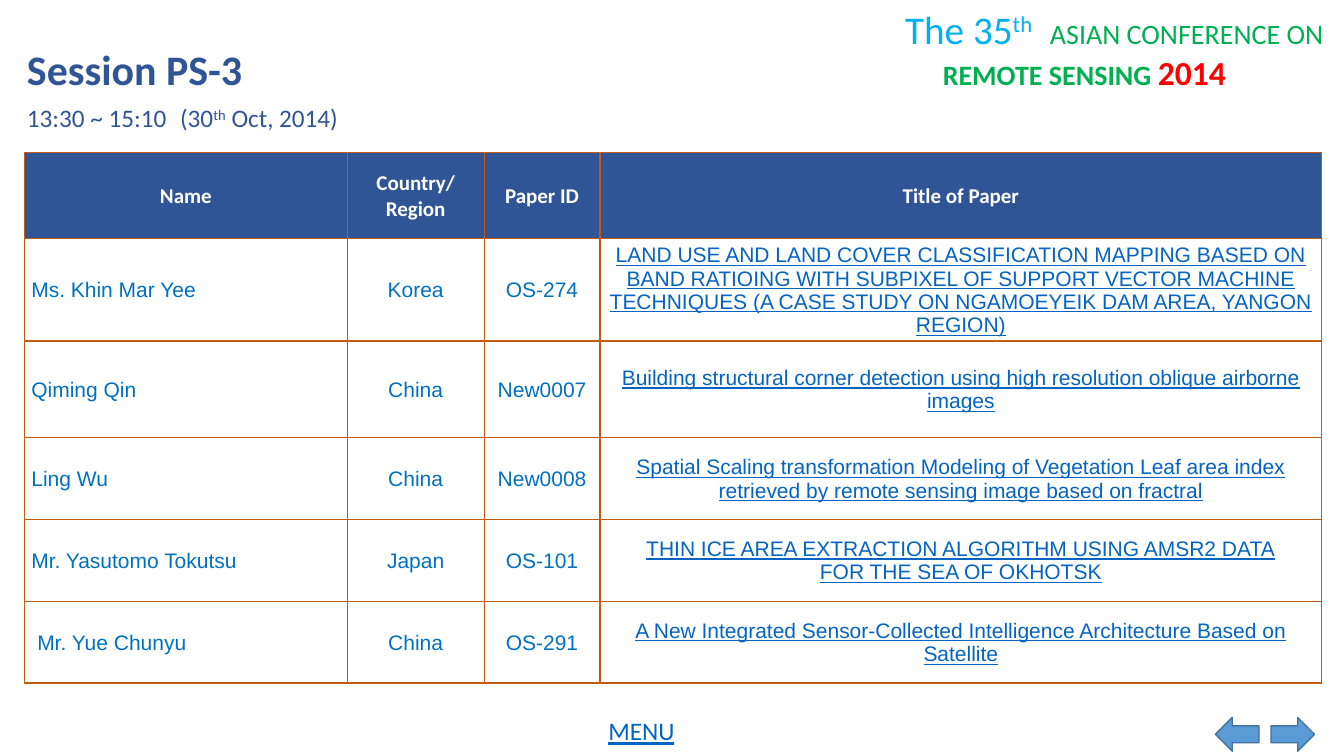
from dataclasses import dataclass, replace

from lxml import etree
from pptx import Presentation
from pptx.dml.color import RGBColor
from pptx.enum.shapes import MSO_SHAPE
from pptx.enum.text import MSO_ANCHOR, PP_ALIGN
from pptx.oxml.ns import qn
from pptx.slide import Slide
from pptx.table import _Cell
from pptx.util import Cm, Pt

LEFT, CENTER = PP_ALIGN.LEFT, PP_ALIGN.CENTER
TOP, MIDDLE = MSO_ANCHOR.TOP, MSO_ANCHOR.MIDDLE
LEFT_ARROW, RIGHT_ARROW = MSO_SHAPE.LEFT_ARROW, MSO_SHAPE.RIGHT_ARROW

WHITE = RGBColor(0xFF, 0xFF, 0xFF)
NAVY = RGBColor(0x2F, 0x55, 0x97)
BLUE = RGBColor(0x00, 0x70, 0xC0)
LINK = RGBColor(0x05, 0x63, 0xC1)
SKY = RGBColor(0x00, 0xB0, 0xF0)
GREEN = RGBColor(0x00, 0xB0, 0x50)
RED = RGBColor(0xFF, 0x00, 0x00)
ORANGE = RGBColor(0xC5, 0x5A, 0x11)
ARROW_FILL = RGBColor(0x5B, 0x9B, 0xD5)
ARROW_LINE = RGBColor(0x43, 0x73, 0x9E)


@dataclass(frozen=True)
class Style:
    size: float
    color: RGBColor
    font: str = "Calibri"
    bold: bool = False
    underline: bool = False
    superscript: bool = False


@dataclass(frozen=True)
class Label:
    left: float
    top: float
    width: float
    height: float
    lines: list[list[tuple[str, Style]]]
    align: PP_ALIGN = LEFT
    anchor: MSO_ANCHOR = TOP


@dataclass(frozen=True)
class Paper:
    name: str
    region: str
    paper_id: str
    title: str
    height: float
    indent: float = 0.17


HEADER = Style(15, WHITE, bold=True)
BODY = Style(15, BLUE, "Arial")
TITLE_LINK = replace(BODY, color=LINK, underline=True)
SESSION = Style(30, NAVY, bold=True)
TIME = Style(18, NAVY)
MENU = Style(18, LINK, underline=True)
EDITION = Style(28, SKY)
CONFERENCE = Style(20, GREEN)

COLUMNS = [
    ("Name", 8.13),
    ("Country/\nRegion", 3.45),
    ("Paper ID", 2.92),
    ("Title of Paper", 18.19),
]
HEADER_HEIGHT = 2.17
PAPERS = [
    Paper("Ms. Khin Mar Yee", "Korea", "OS-274",
          "LAND USE AND LAND COVER CLASSIFICATION MAPPING BASED ON BAND RATIOING "
          "WITH SUBPIXEL OF SUPPORT VECTOR MACHINE TECHNIQUES (A CASE STUDY ON "
          "NGAMOEYEIK DAM AREA, YANGON REGION)", 2.44),
    Paper("Qiming Qin", "China", "New0007",
          "Building structural corner detection using high resolution oblique "
          "airborne images", 2.44),
    Paper("Ling Wu", "China", "New0008",
          "Spatial Scaling transformation Modeling of Vegetation Leaf area index "
          "retrieved by remote sensing image based on fractral", 2.06),
    Paper("Mr. Yasutomo Tokutsu", "Japan", "OS-101",
          "THIN ICE AREA EXTRACTION ALGORITHM USING AMSR2 DATA\n"
          "FOR THE SEA OF OKHOTSK", 2.06),
    Paper("Mr. Yue Chunyu", "China", "OS-291",
          "A New Integrated Sensor-Collected Intelligence Architecture Based on "
          "Satellite", 2.06, 0.32),
]
LABELS = [
    Label(0.43, 0.97, 6.5, 1.55, [[("Session PS-3", SESSION)]]),
    Label(0.43, 2.46, 6.5, 1.02, [[("13:30 ~ 15:10", TIME)]]),
    Label(4.29, 2.46, 6.5, 1.02, [[("(30", TIME),
                                   ("th", replace(TIME, superscript=True)),
                                   (" Oct, 2014)", TIME)]]),
    Label(14.63, 17.93, 3.07, 0.97, [[("MENU", MENU)]], CENTER, MIDDLE),
]
BANNER = Label(22.56, 0, 11.3, 2.49, [
    [("The 35", EDITION), ("th", replace(EDITION, superscript=True)),
     ("\tASIAN CONFERENCE ON", CONFERENCE)],
    [("REMOTE SENSING ", replace(CONFERENCE, bold=True)),
     ("2014", Style(24, RED, bold=True))],
])
BANNER_TAB = 3.65
BANNER_INDENT = 0.95


def add_run(p, text: str, style: Style) -> None:
    r = p.add_run()
    r.text = text
    r.font.name = style.font
    r.font.size = Pt(style.size)
    r.font.bold = style.bold
    r.font.underline = style.underline
    r.font.color.rgb = style.color
    if style.superscript:
        r.font._element.set("baseline", "30000")


def fill_text(tf, lines: list[list[tuple[str, Style]]], align: PP_ALIGN) -> None:
    for i, line in enumerate(lines):
        p = tf.paragraphs[0] if i == 0 else tf.add_paragraph()
        p.alignment = align
        for text, style in line:
            add_run(p, text, style)


def add_label(s: Slide, label: Label):
    sp = s.shapes.add_textbox(Cm(label.left), Cm(label.top), Cm(label.width), Cm(label.height))
    tf = sp.text_frame
    tf.word_wrap = True
    tf.vertical_anchor = label.anchor
    fill_text(tf, label.lines, label.align)
    return tf


def add_banner(s: Slide) -> None:
    first, second = add_label(s, BANNER).paragraphs
    tabs = etree.SubElement(first._p.get_or_add_pPr(), qn("a:tabLst"))
    etree.SubElement(tabs, qn("a:tab"), pos=str(Cm(BANNER_TAB)), algn="l")
    second._p.get_or_add_pPr().set("marL", str(Cm(BANNER_INDENT)))


def set_borders(cell: _Cell) -> None:
    tcPr = cell._tc.get_or_add_tcPr()
    for i, side in enumerate(("lnL", "lnR", "lnT", "lnB")):
        ln = etree.Element(qn(f"a:{side}"), w=str(Pt(1)))
        fill = etree.SubElement(ln, qn("a:solidFill"))
        etree.SubElement(fill, qn("a:srgbClr"), val=str(ORANGE))
        tcPr.insert(i, ln)


def fill_cell(cell: _Cell, text: str, style: Style, align: PP_ALIGN = CENTER,
              indent: float = 0.03, fill: RGBColor = WHITE) -> None:
    cell.margin_left = Cm(indent)
    cell.margin_right = cell.margin_top = Cm(0.03)
    cell.margin_bottom = 0
    cell.vertical_anchor = MIDDLE
    cell.fill.solid()
    cell.fill.fore_color.rgb = fill
    set_borders(cell)
    fill_text(cell.text_frame, [[(line, style)] for line in text.split("\n")], align)


def add_papers(s: Slide) -> None:
    heights = [HEADER_HEIGHT] + [paper.height for paper in PAPERS]
    width = sum(w for _, w in COLUMNS)
    table = s.shapes.add_table(len(heights), len(COLUMNS), Cm(0.62), Cm(3.85),
                               Cm(width), Cm(sum(heights))).table
    for row, height in zip(table.rows, heights):
        row.height = Cm(height)
    for j, (heading, w) in enumerate(COLUMNS):
        table.columns[j].width = Cm(w)
        fill_cell(table.cell(0, j), heading, HEADER, fill=NAVY)
    for i, paper in enumerate(PAPERS, 1):
        fill_cell(table.cell(i, 0), paper.name, BODY, LEFT, paper.indent)
        fill_cell(table.cell(i, 1), paper.region, BODY)
        fill_cell(table.cell(i, 2), paper.paper_id, BODY)
        fill_cell(table.cell(i, 3), paper.title, TITLE_LINK)


def add_arrow(s: Slide, kind: MSO_SHAPE, left: float) -> None:
    sp = s.shapes.add_shape(kind, Cm(left), Cm(18.08), Cm(1.1), Cm(0.85))
    sp.shadow.inherit = False
    sp.fill.solid()
    sp.fill.fore_color.rgb = ARROW_FILL
    sp.line.color.rgb = ARROW_LINE
    sp.line.width = Pt(1)


def main() -> None:
    prs = Presentation()
    prs.slide_width, prs.slide_height = Cm(33.87), Cm(19.05)
    s = prs.slides.add_slide(prs.slide_layouts[6])
    add_banner(s)
    add_papers(s)
    for label in LABELS:
        add_label(s, label)
    add_arrow(s, LEFT_ARROW, 30.63)
    add_arrow(s, RIGHT_ARROW, 32.03)
    prs.save("out.pptx")


if __name__ == "__main__":
    main()
